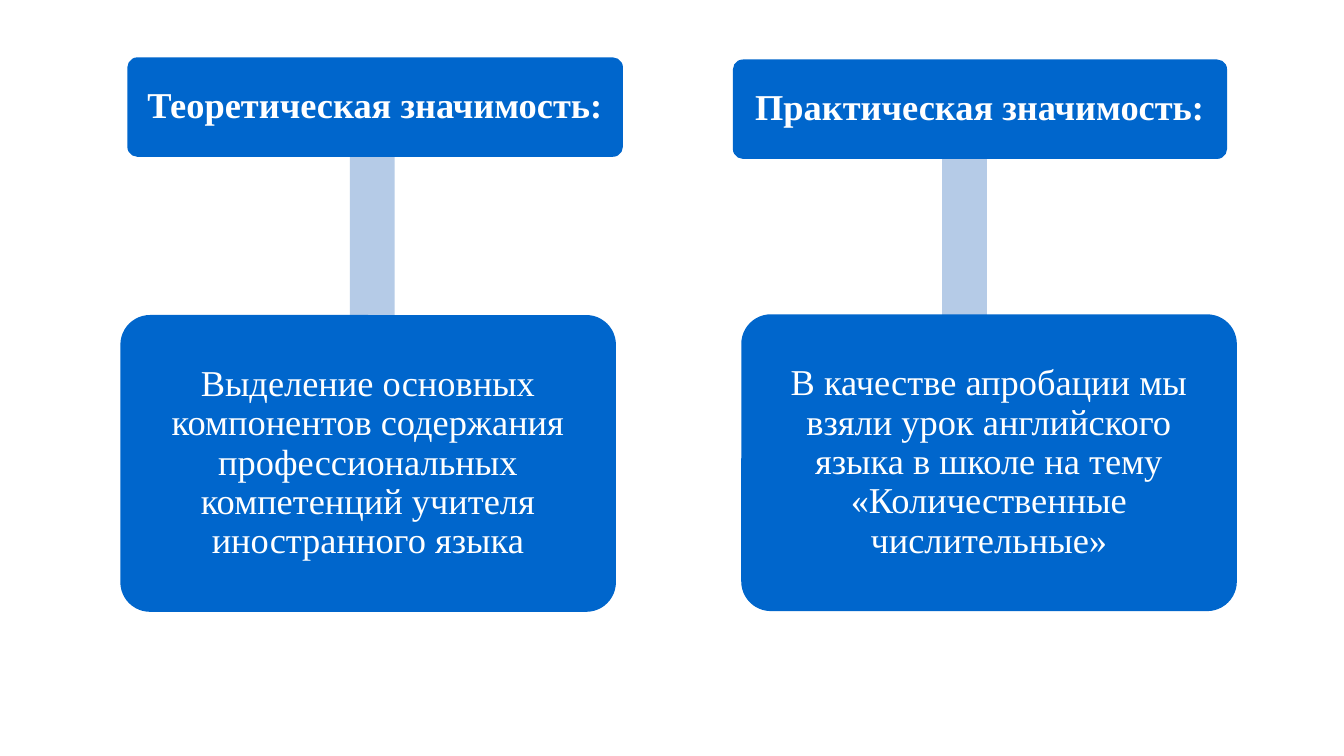
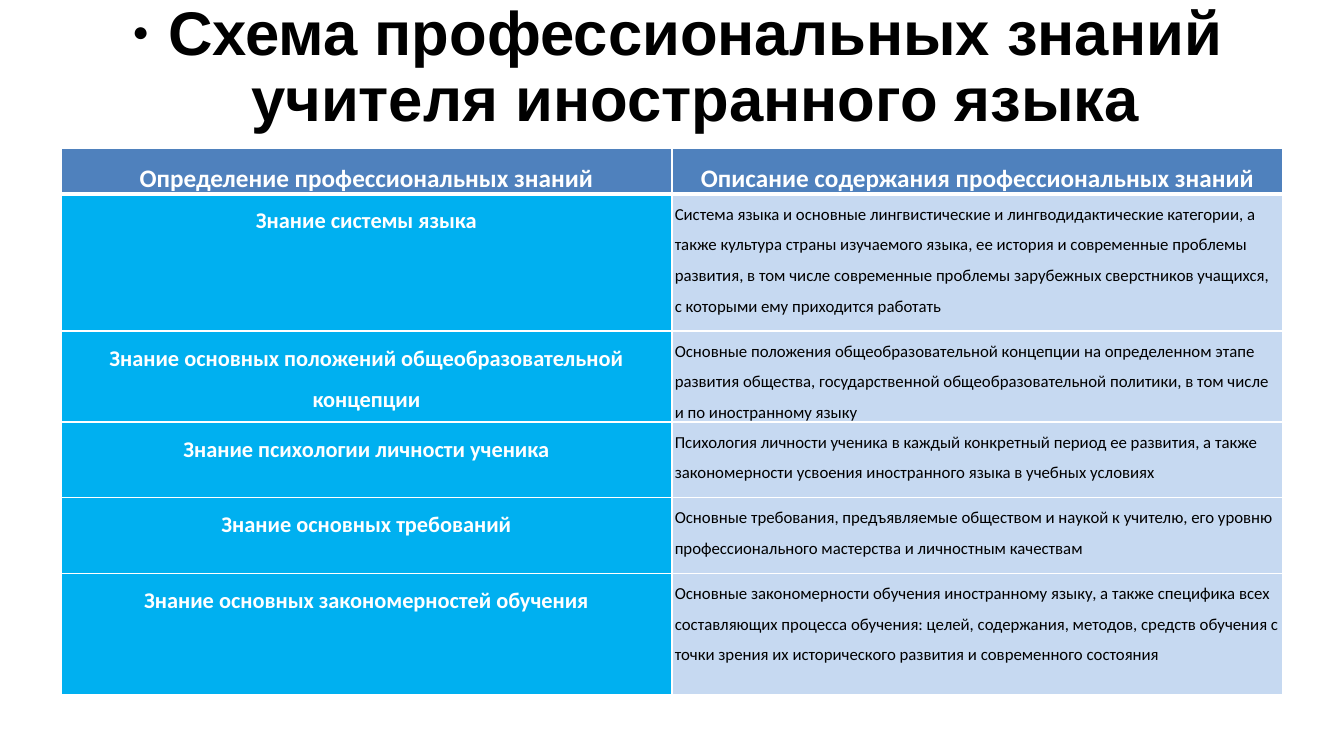
from dataclasses import dataclass

import lxml.etree
import pptx
import pptx.dml.color
import pptx.enum.shapes
import pptx.enum.text
import pptx.oxml.ns
import pptx.util

Pt = pptx.util.Pt
ALIGN = pptx.enum.text.PP_ALIGN
ANCHOR = pptx.enum.text.MSO_ANCHOR
PRESET = pptx.enum.shapes.MSO_SHAPE


@dataclass(frozen=True)
class Theme:
    white: str = "FFFFFF"
    black: str = "000000"
    box: str = "0066CC"
    bar: str = "B5CBE7"
    table_head: str = "4F81BD"
    table_term: str = "00B0F0"
    table_text: str = "C6D9F1"
    title_font: str = "Arial"
    box_font: str = "Times New Roman"
    table_font: str = "Calibri"
    title_size: float = 44
    box_size: float = 26
    head_size: float = 18
    term_size: float = 16
    text_size: float = 12


THEME = Theme()

# Each branch: (header text, header place), bar place, (body text, body place)
BRANCHES = [
    (("Теоретическая значимость:", (91, 41, 354, 71)),
     (250, 59, 32, 202),
     ("Выделение основных компонентов содержания профессиональных "
      "компетенций учителя иностранного языка", (86, 225, 354, 212))),
    (("Практическая значимость:", (523.5, 42.5, 353, 71)),
     (673, 78, 32, 253),
     ("В качестве апробации мы взяли урок английского языка в школе на тему "
      "«Количественные числительные»", (529.5, 224.5, 354, 212))),
]

KNOWLEDGE_HEAD = ("Определение профессиональных знаний",
                  "Описание содержания профессиональных знаний")
KNOWLEDGE = [
    ("Знание системы языка",
     "Система языка и основные лингвистические и лингводидактические категории, "
     "а также культура страны изучаемого языка, ее история и современные "
     "проблемы развития, в том числе современные проблемы зарубежных "
     "сверстников учащихся, с которыми ему приходится работать"),
    ("Знание основных положений общеобразовательной концепции",
     "Основные положения общеобразовательной концепции на определенном этапе "
     "развития общества, государственной общеобразовательной политики, "
     "в том числе и по иностранному языку"),
    ("Знание психологии личности ученика",
     "Психология личности ученика в каждый конкретный период ее развития, "
     "а также закономерности усвоения иностранного языка в учебных условиях"),
    ("Знание основных требований",
     "Основные требования, предъявляемые обществом и наукой к учителю, "
     "его уровню профессионального мастерства и личностным качествам"),
    ("Знание основных закономерностей обучения",
     "Основные закономерности обучения иностранному языку, а также специфика "
     "всех составляющих процесса обучения: целей, содержания, методов, средств "
     "обучения с точки зрения их исторического развития и современного состояния"),
]
ROW_HEIGHTS = (32.5, 98, 65, 54, 54, 87)


def rgb(code):
    return pptx.dml.color.RGBColor.from_string(code)


def points(place):
    return [Pt(length) for length in place]


def write(frame, text, font, size, color, bold=False, align=ALIGN.CENTER, spacing=0.9):
    """Put one formatted paragraph into a text frame and return it."""
    paragraph = frame.paragraphs[0]
    paragraph.alignment = align
    paragraph.line_spacing = spacing
    run = paragraph.add_run()
    run.text = text
    run.font.name = font
    run.font.size = Pt(size)
    run.font.bold = bold
    run.font.color.rgb = rgb(color)
    return paragraph


def set_margins(frame, horizontal, vertical):
    frame.margin_left = frame.margin_right = Pt(horizontal)
    frame.margin_top = frame.margin_bottom = Pt(vertical)


def add_block(slide, preset, place, color):
    block = slide.shapes.add_shape(preset, *points(place))
    block.shadow.inherit = False
    block.fill.solid()
    block.fill.fore_color.rgb = rgb(color)
    block.line.fill.background()
    return block


def add_box(slide, text, place, bold=False):
    box = add_block(slide, PRESET.ROUNDED_RECTANGLE, place, THEME.box)
    box.adjustments[0] = 0.1
    frame = box.text_frame
    frame.word_wrap = True
    frame.vertical_anchor = ANCHOR.MIDDLE
    set_margins(frame, 8, 8)
    write(frame, text, THEME.box_font, THEME.box_size, THEME.white, bold)


def add_bulleted_title(slide, text, place):
    title = slide.shapes.add_textbox(*points(place))
    frame = title.text_frame
    frame.word_wrap = True
    frame.vertical_anchor = ANCHOR.MIDDLE
    set_margins(frame, 0, 0)
    paragraph = write(frame, text, THEME.title_font, THEME.title_size,
                      THEME.black, bold=True)
    # Hanging bullet at 45 % of the text size
    properties = paragraph._p.get_or_add_pPr()
    properties.set("marL", str(Pt(34)))
    properties.set("indent", str(-Pt(25.5)))
    for tag, name, value in (("a:buSzPct", "val", "45000"),
                             ("a:buFont", "typeface", THEME.title_font),
                             ("a:buChar", "char", "●")):
        lxml.etree.SubElement(properties, pptx.oxml.ns.qn(tag)).set(name, value)


def set_borders(cell, **widths):
    """Draw white borders; widths are keyed by side: L, R, T, B."""
    properties = cell._tc.get_or_add_tcPr()
    for position, (side, width) in enumerate(widths.items()):
        line = lxml.etree.Element(pptx.oxml.ns.qn(f"a:ln{side}"), w=str(Pt(width)))
        fill = lxml.etree.SubElement(line, pptx.oxml.ns.qn("a:solidFill"))
        lxml.etree.SubElement(fill, pptx.oxml.ns.qn("a:srgbClr"), val=THEME.white)
        properties.insert(position, line)


def fill_cell(cell, text, fill, size, color, bold, align):
    cell.fill.solid()
    cell.fill.fore_color.rgb = rgb(fill)
    set_margins(cell, 2, 0)
    write(cell.text_frame, text, THEME.table_font, size, color, bold, align, 1.5)


def add_knowledge_table(slide, place):
    rows = [KNOWLEDGE_HEAD, *KNOWLEDGE]
    table = slide.shapes.add_table(len(rows), 2, *points(place)).table
    table.horz_banding = False
    for column in table.columns:
        column.width = Pt(place[2] / 2)
    head = (THEME.table_head, THEME.head_size, THEME.white, True, ALIGN.CENTER)
    term = (THEME.table_term, THEME.term_size, THEME.white, True, ALIGN.CENTER)
    description = (THEME.table_text, THEME.text_size, THEME.black, False, ALIGN.LEFT)
    for r, (texts, height) in enumerate(zip(rows, ROW_HEIGHTS)):
        table.rows[r].height = Pt(height)
        styles = (head, head) if r == 0 else (term, description)
        for c, (text, style) in enumerate(zip(texts, styles)):
            cell = table.cell(r, c)
            fill_cell(cell, text, *style)
            set_borders(cell, L=1, R=1, T=3 if r == 1 else 1, B=3 if r == 0 else 1)


def build_significance(slide):
    for (heading, heading_place), bar_place, (body, body_place) in BRANCHES:
        add_block(slide, PRESET.RECTANGLE, bar_place, THEME.bar)
        add_box(slide, heading, heading_place, bold=True)
        add_box(slide, body, body_place)


def build_knowledge(slide):
    add_bulleted_title(slide, "Схема профессиональных знаний учителя иностранного языка",
                       (66, 3, 828, 92))
    add_knowledge_table(slide, (43.5, 106, 873, sum(ROW_HEIGHTS)))


def main():
    deck = pptx.Presentation()
    deck.slide_width, deck.slide_height = Pt(960), Pt(540)
    blank = deck.slide_layouts[6]
    for build in (build_significance, build_knowledge):
        build(deck.slides.add_slide(blank))
    deck.save("out.pptx")


if __name__ == "__main__":
    main()
